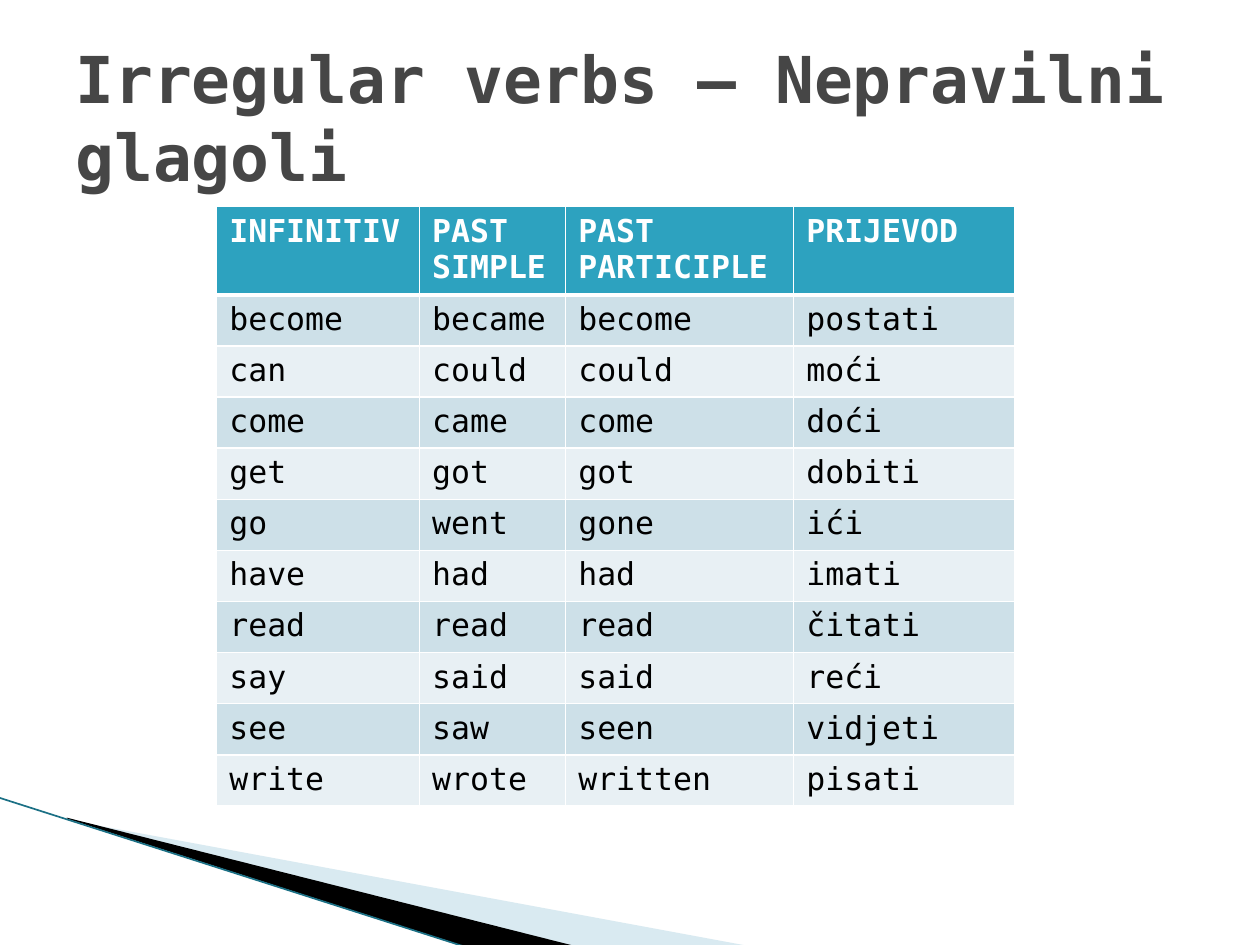
import lxml.etree
import pptx
import pptx.dml.color
import pptx.enum.shapes
import pptx.enum.text
import pptx.oxml.ns
import pptx.util

FONT = "DejaVu Sans Mono"
COLORS = {
    "title": "464646", "header": "2DA2BF", "odd": "CDE0E8", "even": "E8F0F4",
    "white": "FFFFFF", "black": "000000", "wedge": "A0CBDC", "edge": "1B7085",
}
VERBS = [
    ("INFINITIV", "PAST SIMPLE", "PAST PARTICIPLE", "PRIJEVOD"),
    ("become", "became", "become", "postati"),
    ("can", "could", "could", "moći"),
    ("come", "came", "come", "doći"),
    ("get", "got", "got", "dobiti"),
    ("go", "went", "gone", "ići"),
    ("have", "had", "had", "imati"),
    ("read", "read", "read", "čitati"),
    ("say", "said", "said", "reći"),
    ("see", "saw", "seen", "vidjeti"),
    ("write", "wrote", "written", "pisati"),
]

deck = pptx.Presentation()
deck.slide_width = pptx.util.Inches(10)
deck.slide_height = pptx.util.Inches(7.5)
page = deck.slides.add_slide(deck.slide_layouts[6])


def place(x, y):
    """Turn percentages of the slide's width and height into lengths."""
    return int(deck.slide_width * x / 100), int(deck.slide_height * y / 100)


def style(para, size, color, bold):
    for span in para.runs:
        span.font.name = FONT
        span.font.size = pptx.util.Pt(size)
        span.font.bold = bold
        span.font.color.rgb = pptx.dml.color.RGBColor.from_string(COLORS[color])


# Corner wedges: colour, opacity in percent, frame position and size, corners
wedges = [
    ("wedge", 40, (7.8, 72.93), (41.6, 21.07),
     [(5.5, 86.8), (59.5, 100.13), (45.6, 100.13), (5.5, 86.67)]),
    ("black", 100, (-0.6, 84.4), (41.6, 12.27),
     [(5.3, 86.53), (45.7, 100.13), (37.2, 100.27), (5.4, 86.67)]),
]
for color, opacity, origin, size, corners in wedges:
    points = [place(*corner) for corner in corners]
    builder = page.shapes.build_freeform(*points[0])
    builder.add_line_segments(points[1:], close=True)
    wedge = builder.convert_to_shape()
    wedge.shadow.inherit = False
    wedge.line.fill.background()
    wedge.fill.solid()
    wedge.fill.fore_color.rgb = pptx.dml.color.RGBColor.from_string(COLORS[color])
    if opacity < 100:
        tint = wedge.fill._xPr.find(".//" + pptx.oxml.ns.qn("a:srgbClr"))
        alpha = lxml.etree.SubElement(tint, pptx.oxml.ns.qn("a:alpha"))
        alpha.set("val", str(opacity * 1000))

    # The outline reaches beyond its frame, so its corners count from the frame
    wedge.left, wedge.top = place(*origin)
    wedge.width, wedge.height = place(*size)
    outline = wedge._element.spPr.find(".//" + pptx.oxml.ns.qn("a:path"))
    outline.set("w", str(wedge.width))
    outline.set("h", str(wedge.height))
    for node, (x, y) in zip(outline.iter(pptx.oxml.ns.qn("a:pt")), points):
        node.set("x", str(x - wedge.left))
        node.set("y", str(y - wedge.top))

# Line along the lower edge of the wedges
edge = page.shapes.add_connector(
    pptx.enum.shapes.MSO_CONNECTOR.STRAIGHT, *place(-0.1, 84.4), *place(37.1, 100.27))
edge.line.color.rgb = pptx.dml.color.RGBColor.from_string(COLORS["edge"])
edge.line.width = pptx.util.Pt(0.95)
lxml.etree.SubElement(edge._element.spPr, pptx.oxml.ns.qn("a:effectLst"))

# Title
box = page.shapes.add_textbox(*place(5, 4), *place(90, 16.67))
box.text_frame.word_wrap = True
box.text_frame.vertical_anchor = pptx.enum.text.MSO_ANCHOR.MIDDLE
box.text_frame.text = "Irregular verbs – Nepravilni glagoli"
style(box.text_frame.paragraphs[0], 36.9, "title", True)

# Verb table: equal rows, of which the header grows to fit two lines
frame = page.shapes.add_table(
    len(VERBS), len(VERBS[0]), *place(17.2, 21.87), *place(63.3, 63.47))
table = frame.table
for column, share in zip(table.columns, (16.1, 11.6, 18.1, 17.5)):
    column.width = place(share, 0)[0]
for row in table.rows:
    row.height = place(0, 5.41)[1]

for number, words in enumerate(VERBS):
    header = number == 0
    fill = "header" if header else "odd" if number % 2 else "even"
    for index, word in enumerate(words):
        cell = table.cell(number, index)
        cell.text_frame.text = word
        style(cell.text_frame.paragraphs[0], 18, "white" if header else "black", header)

        # White borders, thicker around the line below the header
        properties = cell._tc.get_or_add_tcPr()
        for side in "LRTB":
            thick = (side, number) in (("B", 0), ("T", 1))
            border = lxml.etree.SubElement(properties, pptx.oxml.ns.qn("a:ln" + side))
            border.set("w", str(pptx.util.Pt(3 if thick else 1)))
            paint = lxml.etree.SubElement(border, pptx.oxml.ns.qn("a:solidFill"))
            white = lxml.etree.SubElement(paint, pptx.oxml.ns.qn("a:srgbClr"))
            white.set("val", COLORS["white"])
        cell.fill.solid()
        cell.fill.fore_color.rgb = pptx.dml.color.RGBColor.from_string(COLORS[fill])

deck.save("out.pptx")
